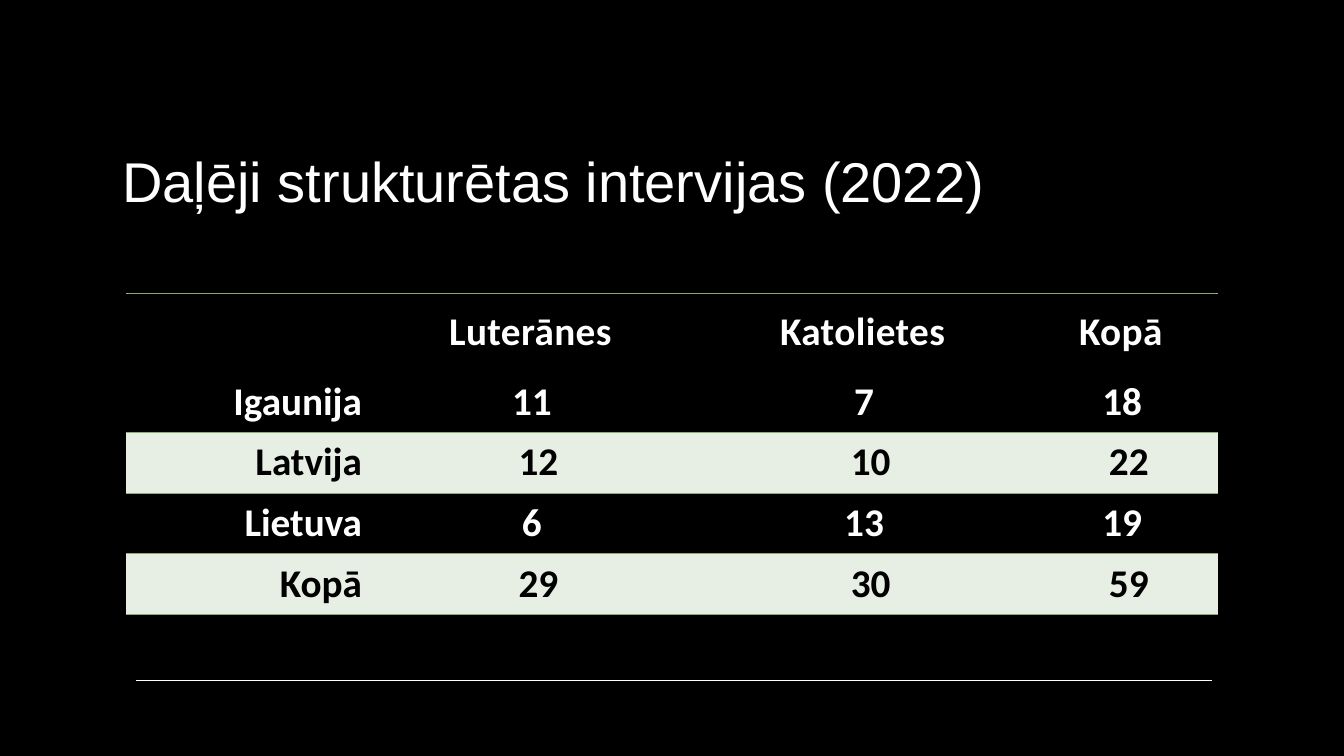
from dataclasses import dataclass

from lxml import etree
from pptx import Presentation
from pptx import util as u
from pptx.dml.color import RGBColor
from pptx.enum import shapes, text
from pptx.oxml import ns

# Slide grid: 64 columns by 36 rows of square units
WIDTH, HEIGHT = u.Inches(13.333), u.Inches(7.5)
COLUMN, ROW = WIDTH / 64, HEIGHT / 36

BLACK, WHITE, BAND, RULE = "000000", "FFFFFF", "E7EEE3", "89AB75"
NO_STYLE = "{2D5ABB26-0587-4C30-8999-92F81FD0307C}"


@dataclass(frozen=True)
class TableRow:
    values: tuple[str, str, str, str]
    height: float = 2.9
    banded: bool = False
    header: bool = False


COLUMN_WIDTHS = (11.23, 16.18, 15.46, 9.13)
TABLE_ROWS = (
    TableRow(("", "Luterānes", "Katolietes", "Kopā"), height=3.7, header=True),
    TableRow(("Igaunija", "11", "7", "18")),
    TableRow(("Latvija", "12", "10", "22"), banded=True),
    TableRow(("Lietuva", "6", "13", "19")),
    TableRow(("Kopā", "29", "30", "59"), banded=True),
)


def across(columns: float) -> u.Emu:
    return u.Emu(round(columns * COLUMN))


def down(rows: float) -> u.Emu:
    return u.Emu(round(rows * ROW))


def colour(value: str) -> RGBColor:
    return RGBColor.from_string(value)


def style_font(font, name: str, size: float, ink: str, bold: bool = False) -> None:
    font.name, font.size, font.bold = name, u.Pt(size), bold
    font.color.rgb = colour(ink)


def add_border(cell, side: str, points: float) -> None:
    properties = cell._tc.get_or_add_tcPr()
    line = etree.Element(ns.qn(f"a:{side}"), w=str(u.Pt(points)))
    fill = etree.SubElement(line, ns.qn("a:solidFill"))
    etree.SubElement(fill, ns.qn("a:srgbClr"), val=RULE)
    # Borders come before the cell fill
    borders = [child for child in properties if child.tag.startswith(ns.qn("a:ln"))]
    properties.insert(len(borders), line)


def fill_cell(cell, row: TableRow, value: str, is_label: bool) -> None:
    cell.margin_left = u.Inches(0.13 if row.banded else 0)
    cell.margin_right = u.Inches(0.03 if row.header else 0)
    cell.margin_top = cell.margin_bottom = 0
    cell.vertical_anchor = text.MSO_ANCHOR.MIDDLE
    if row.banded:
        cell.fill.solid()
        cell.fill.fore_color.rgb = colour(BAND)
    else:
        cell.fill.background()

    para = cell.text_frame.paragraphs[0]
    para.alignment = text.PP_ALIGN.RIGHT if is_label else text.PP_ALIGN.CENTER
    if not is_label:
        para.space_after = u.Pt(16)
    style_font(para.font, "Calibri", 28, BLACK if row.banded else WHITE, bold=True)
    if value:
        span = para.add_run()
        span.text = value
        if row.header:
            span._r.get_or_add_rPr().set("spc", "30")


def add_backdrop(page) -> None:
    page.background.fill.solid()
    page.background.fill.fore_color.rgb = colour(BLACK)
    panel = page.shapes.add_shape(
        shapes.MSO_SHAPE.RECTANGLE, 0, 0, WIDTH, HEIGHT)
    panel.shadow.inherit = False
    panel.fill.solid()
    panel.fill.fore_color.rgb = colour(BLACK)
    panel.line.fill.background()


def add_title(page, title: str) -> None:
    box = page.shapes.add_textbox(across(5.36), down(4.56), across(51.31), down(8.02))
    frame = box.text_frame
    frame.word_wrap = True
    frame.vertical_anchor = text.MSO_ANCHOR.MIDDLE
    para = frame.paragraphs[0]
    para.text = title
    style_font(para.font, "Arial", 40, WHITE)


def add_interview_table(page) -> None:
    height = sum(row.height for row in TABLE_ROWS)
    frame = page.shapes.add_table(
        len(TABLE_ROWS), len(COLUMN_WIDTHS),
        across(6.01), down(13.98), across(sum(COLUMN_WIDTHS)), down(height))
    table = frame.table
    table.first_row = table.horz_banding = False
    table._tbl.tblPr.find(ns.qn("a:tableStyleId")).text = NO_STYLE

    for column, width in zip(table.columns, COLUMN_WIDTHS):
        column.width = across(width)
    for row_index, row in enumerate(TABLE_ROWS):
        table.rows[row_index].height = down(row.height)
        for column_index, value in enumerate(row.values):
            cell = table.cell(row_index, column_index)
            fill_cell(cell, row, value, is_label=column_index == 0)
            if row.header or row.banded:
                add_border(cell, "lnT", 1.5 if row.header else 0.75)
            if row is TABLE_ROWS[-1]:
                add_border(cell, "lnB", 0.75)


def add_footer_line(page) -> None:
    line = page.shapes.add_connector(
        shapes.MSO_CONNECTOR.STRAIGHT,
        across(6.48), down(32.4), across(57.7), down(32.4))
    line.line.color.rgb = colour(WHITE)
    line.line.width = u.Pt(1)
    etree.SubElement(line._element.spPr, ns.qn("a:effectLst"))


def main() -> None:
    deck = Presentation()
    deck.slide_width, deck.slide_height = WIDTH, HEIGHT
    page = deck.slides.add_slide(deck.slide_layouts[6])

    # Black panel behind everything
    add_backdrop(page)

    # Content
    add_footer_line(page)
    add_interview_table(page)
    add_title(page, "Daļēji strukturētas intervijas (2022)")
    deck.save("out.pptx")


if __name__ == "__main__":
    main()
